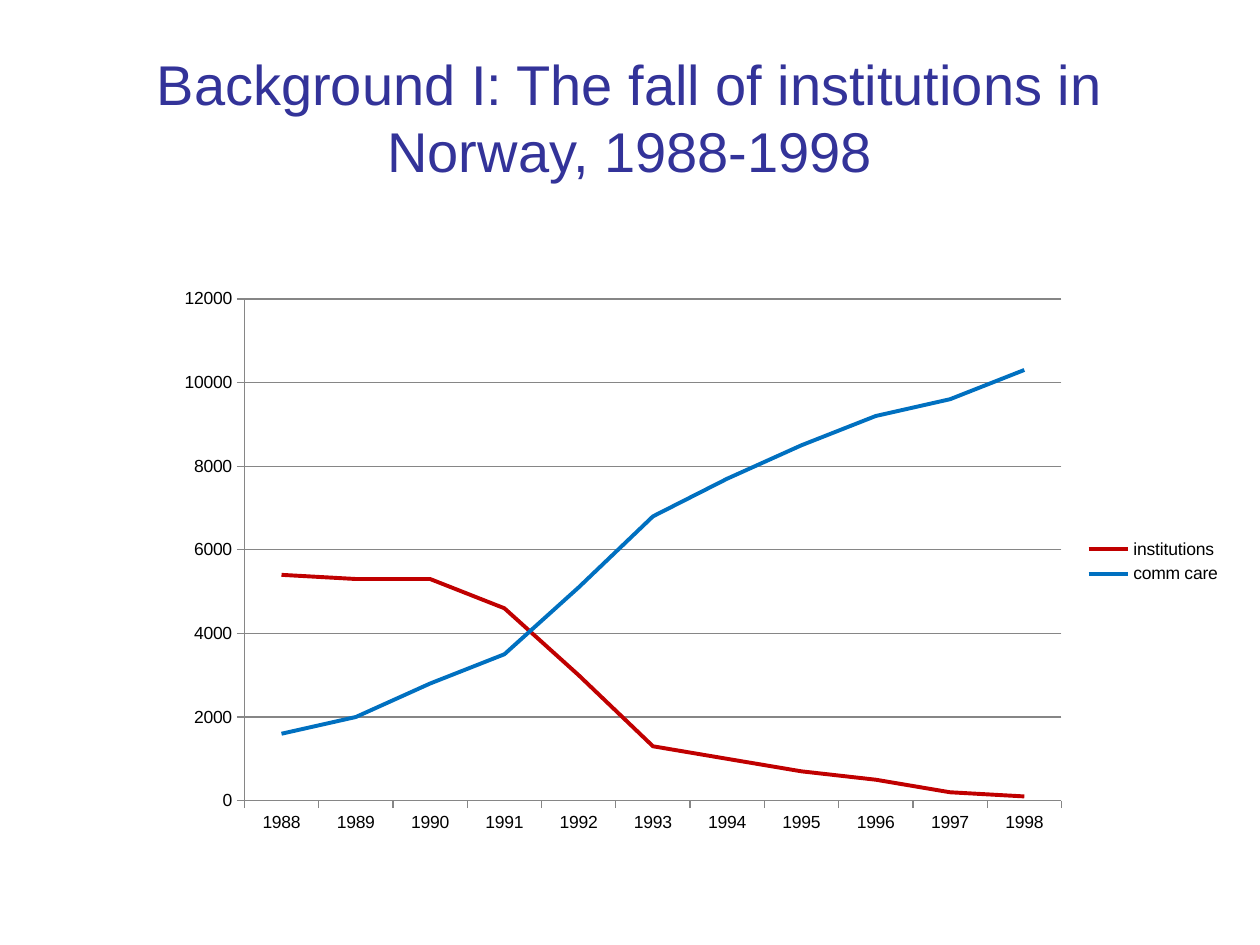
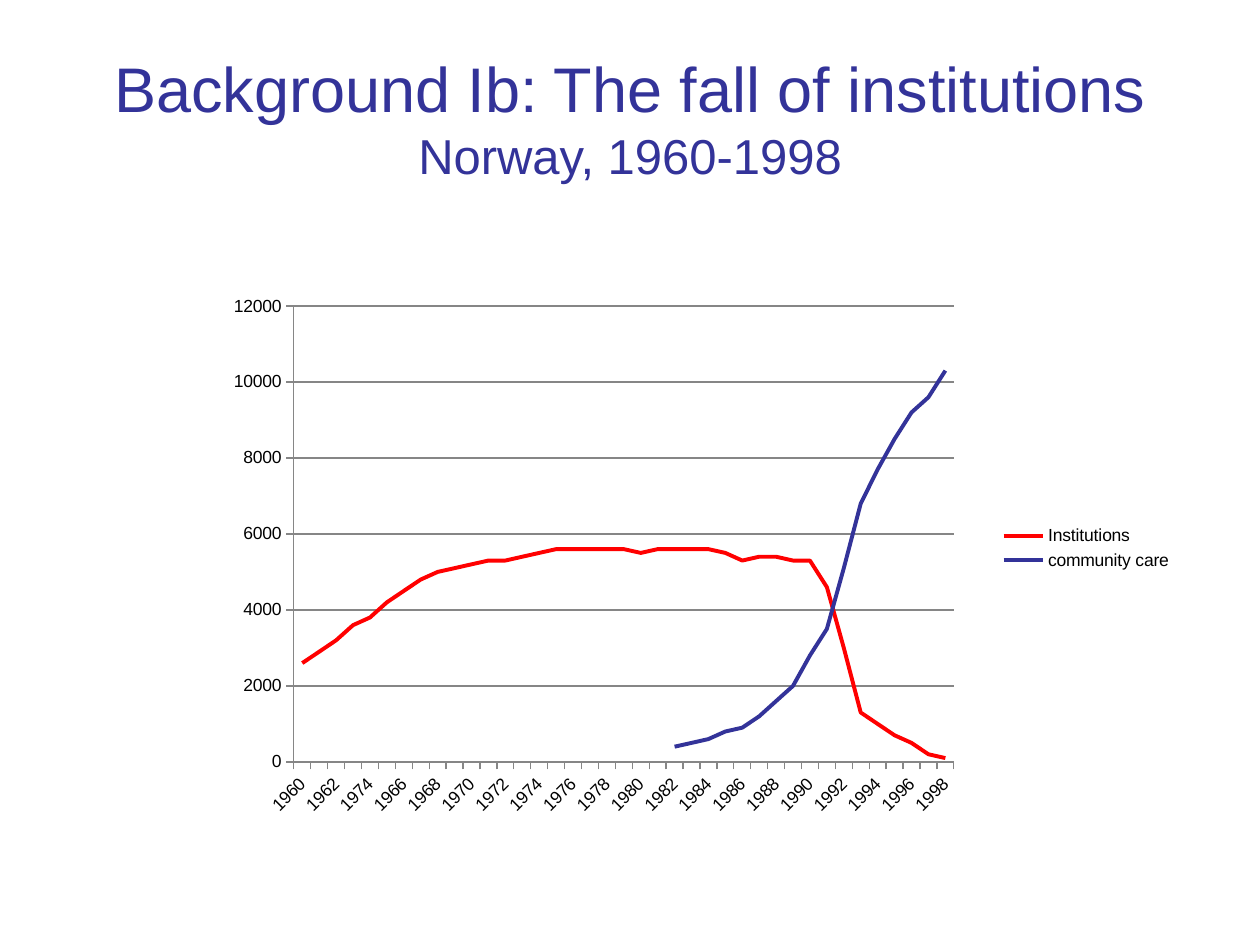
from dataclasses import dataclass

from lxml import etree
from pptx import Presentation
from pptx.chart.data import CategoryChartData
from pptx.dml.color import RGBColor
from pptx.enum.chart import XL_CHART_TYPE, XL_LEGEND_POSITION, XL_TICK_MARK
from pptx.enum.text import MSO_ANCHOR, MSO_AUTO_SIZE, PP_ALIGN
from pptx.oxml import parse_xml
from pptx.oxml.ns import nsdecls, qn
from pptx.util import Emu, Pt


@dataclass(frozen=True)
class Theme:
    font: str = "Arial"
    title: str = "333399"
    text: str = "000000"
    axis: str = "868686"
    dark_red: str = "C00000"
    blue: str = "0070C0"
    red: str = "FF0000"
    indigo: str = "333399"
    title_size: int = 32
    large_title_size: int = 36
    subtitle_size: int = 28
    chart_size: int = 10
    series_width: float = 2.25
    axis_width: float = 0.75


THEME = Theme()
PX_PER_INCH = 126
SLIDE_SIZE = (1260, 945)
TITLE_BOX = (63, 38, 1134, 158)
TITLE_ONLY = 5

INSTITUTIONS_1960_87 = [
    2600, 2900, 3200, 3600, 3800, 4200, 4500, 4800, 5000, 5100,
    5200, 5300, 5300, 5400, 5500, 5600, 5600, 5600, 5600, 5600,
    5500, 5600, 5600, 5600, 5600, 5500, 5300, 5400,
]
INSTITUTIONS_1988_98 = [5400, 5300, 5300, 4600, 3000, 1300, 1000, 700, 500, 200, 100]
CARE_1982_87 = [400, 500, 600, 800, 900, 1200]
CARE_1988_98 = [1600, 2000, 2800, 3500, 5100, 6800, 7700, 8500, 9200, 9600, 10300]


def px(n):
    return Emu(round(n * 914400 / PX_PER_INCH))


def rgb(value):
    return RGBColor.from_string(value)


def add_titled_slide(prs, runs):
    """Add a title-only slide; runs is a list of (text, size)."""
    s = prs.slides.add_slide(prs.slide_layouts[TITLE_ONLY])
    title = s.shapes.title
    title.left, title.top, title.width, title.height = map(px, TITLE_BOX)
    tf = title.text_frame
    tf.word_wrap = True
    tf.auto_size = MSO_AUTO_SIZE.NONE
    tf.vertical_anchor = MSO_ANCHOR.MIDDLE
    p = tf.paragraphs[0]
    p.alignment = PP_ALIGN.CENTER
    p.font.name = THEME.font
    p.font.color.rgb = rgb(THEME.title)
    for text, size in runs:
        r = p.add_run()
        r.text = text
        r.font.size = Pt(size)
    return s


def style_line(line, color, width):
    line.color.rgb = rgb(color)
    line.width = Pt(width)


def set_plot_box(chart, box, plot):
    """Fix the inner plot area; box and plot are in px on the slide."""
    left, top, width, height = box
    fractions = {
        "x": (plot[0] - left) / width,
        "y": (plot[1] - top) / height,
        "w": plot[2] / width,
        "h": plot[3] / height,
    }
    values = "".join(f'<c:{k} val="{v:.3f}"/>' for k, v in fractions.items())
    layout = parse_xml(
        f'<c:layout {nsdecls("c")}><c:manualLayout><c:layoutTarget val="inner"/>'
        f'<c:xMode val="edge"/><c:yMode val="edge"/>{values}'
        "</c:manualLayout></c:layout>"
    )
    area = chart._chartSpace.chart.plotArea
    for old in area.findall(qn("c:layout")):
        area.remove(old)
    area.insert(0, layout)


def slant_alternate_labels(axis):
    """Show every second category label, turned by 45 degrees."""
    cat_ax = axis._element
    body = cat_ax.find(qn("c:txPr")).find(qn("a:bodyPr"))
    body.set("rot", "-2700000")
    body.set("vert", "horz")
    skip = etree.Element(qn("c:tickLblSkip"), val="2")
    cat_ax.find(qn("c:noMultiLvlLbl")).addprevious(skip)


def add_line_chart(s, box, plot, categories, series):
    """Add a line chart; series is a list of (name, values, color)."""
    data = CategoryChartData(number_format="General")
    data.categories = categories
    for name, values, _ in series:
        data.add_series(name, values)
    chart = s.shapes.add_chart(XL_CHART_TYPE.LINE, *map(px, box), data).chart
    chart.has_title = False
    chart.font.name = THEME.font
    chart.font.size = Pt(THEME.chart_size)
    chart.font.color.rgb = rgb(THEME.text)
    chart.has_legend = True
    chart.legend.position = XL_LEGEND_POSITION.RIGHT
    chart.legend.include_in_layout = False
    chart.plots[0].vary_by_categories = False

    for item, (_, _, color) in zip(chart.plots[0].series, series):
        item.smooth = False
        style_line(item.format.line, color, THEME.series_width)

    for axis in (chart.category_axis, chart.value_axis):
        axis.major_tick_mark = XL_TICK_MARK.OUTSIDE
        axis.minor_tick_mark = XL_TICK_MARK.NONE
        axis.tick_labels.font.size = Pt(THEME.chart_size)
        style_line(axis.format.line, THEME.axis, THEME.axis_width)
    value_axis = chart.value_axis
    value_axis.minimum_scale = 0
    value_axis.maximum_scale = 12000
    value_axis.major_unit = 2000
    value_axis.has_major_gridlines = True
    style_line(value_axis.major_gridlines.format.line, THEME.axis, THEME.axis_width)
    set_plot_box(chart, box, plot)
    return chart


def build_decade_slide(prs):
    s = add_titled_slide(prs, [
        ("Background I: The fall of institutions in Norway, 1988-1998", THEME.title_size),
    ])
    add_line_chart(
        s, (163, 278, 1071, 567), (244, 299, 817, 502),
        [str(year) for year in range(1988, 1999)],
        [("institutions", INSTITUTIONS_1988_98, THEME.dark_red),
         ("comm care", CARE_1988_98, THEME.blue)],
    )


def build_long_run_slide(prs):
    s = add_titled_slide(prs, [
        ("Background Ib: The fall of institutions ", THEME.large_title_size),
        ("Norway, 1960-1998", THEME.subtitle_size),
    ])
    years = [str(year) for year in range(1960, 1999)]
    years[4] = "1974"  # the label the slide shows at this place
    institutions = INSTITUTIONS_1960_87 + INSTITUTIONS_1988_98
    care = CARE_1982_87 + CARE_1988_98
    care = [None] * (len(years) - len(care)) + care
    chart = add_line_chart(
        s, (210, 275, 975, 546), (294, 306, 660, 456), years,
        [("Institutions", institutions, THEME.red),
         ("community care", care, THEME.indigo)],
    )
    slant_alternate_labels(chart.category_axis)


def main():
    prs = Presentation()
    prs.slide_width, prs.slide_height = map(px, SLIDE_SIZE)
    build_decade_slide(prs)
    build_long_run_slide(prs)
    prs.save("out.pptx")


if __name__ == "__main__":
    main()
